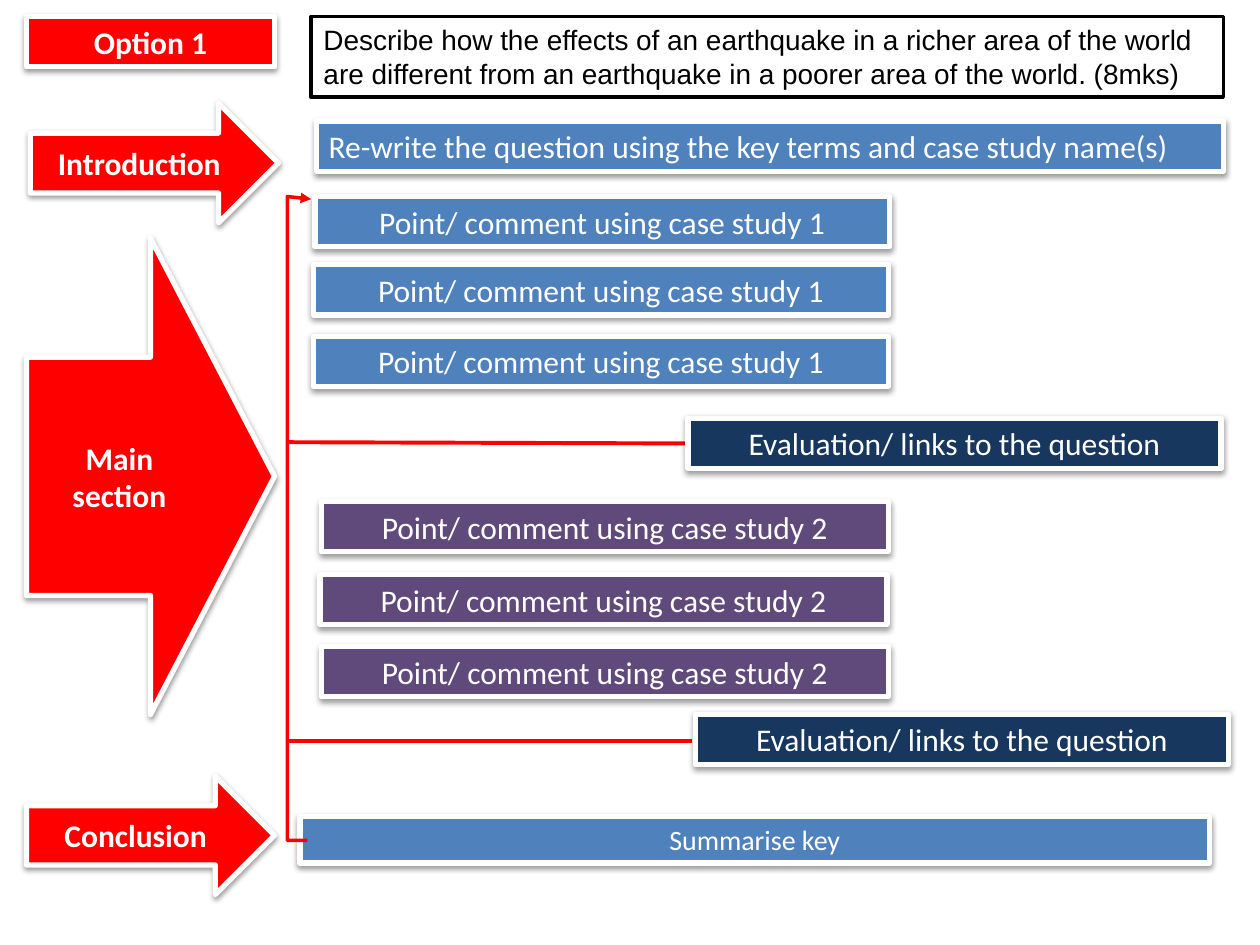
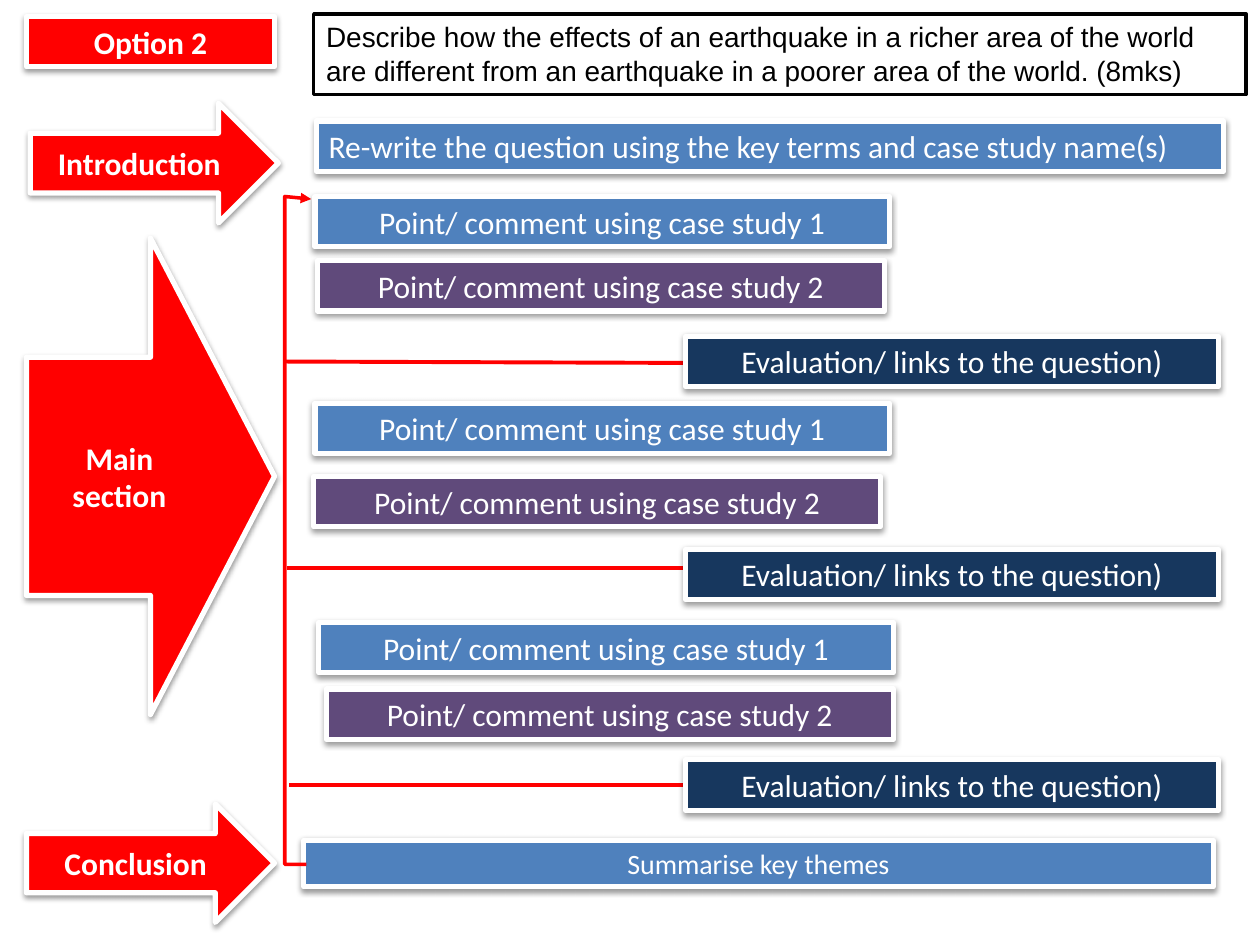
from lxml.etree import SubElement
from pptx import Presentation
from pptx.dml.color import RGBColor
from pptx.enum.shapes import MSO_CONNECTOR, MSO_SHAPE
from pptx.enum.text import MSO_ANCHOR, MSO_AUTO_SIZE, PP_ALIGN
from pptx.oxml.ns import qn
from pptx.util import Pt

RED = RGBColor(0xFF, 0x00, 0x00)
BLUE = RGBColor(0x4F, 0x81, 0xBD)
NAVY = RGBColor(0x17, 0x37, 0x5E)
PURPLE = RGBColor(0x60, 0x4A, 0x7B)
WHITE = RGBColor(0xFF, 0xFF, 0xFF)
BLACK = RGBColor(0x00, 0x00, 0x00)

LABEL = {"name": "Calibri", "size": Pt(18), "bold": False}
HEADING = {**LABEL, "bold": True}
SUMMARY = {**LABEL, "size": Pt(16)}
QUESTION = {"name": "Arial", "size": Pt(16), "bold": False}

QUESTION_TEXT = (
    "Describe how the effects of an earthquake in a richer area of the world are "
    "different from an earthquake in a poorer area of the world. (8mks)"
)
INTRO_TEXT = "Re-write the question using the key terms and case study name(s)"
ROW_H = 28.8
STEPS = {
    "case 1": ("Point/ comment using case study 1", BLUE, 328.3),
    "case 2": ("Point/ comment using case study 2", PURPLE, 324),
    "link": ("Evaluation/ links to the question", NAVY, 304.6),
}

OPTIONS = [
    {
        "title": "Option 1",
        "question": (177.8, 9.4, 521.3, 46.1),
        "conclusion_top": 443.5,
        "summary": ("Summarise key", (171.4, 466.6, 519.8, 26.6)),
        "bracket": (164.2, 112.3, 11.5, 367.9),
        "stems": [(164.2, 252.7, 393.1, 253.4), (164.2, 423.4, 395.3, 423.4)],
        "steps": [
            ("case 1", 0.7, 0), ("case 1", 0, 38.9), ("case 1", 0, 79.9),
            ("link", 213.8, 126.7),
            ("case 2", 4.3, 174.3), ("case 2", 3.6, 216), ("case 2", 4.3, 257.1),
            ("link", 218.1, 295.9),
        ],
        "link_end": "",
    },
    {
        "title": "Option 2",
        "question": (179.3, 7.9, 532.8, 46.1),
        "conclusion_top": 459.4,
        "summary": ("Summarise key themes", (173.5, 480.2, 519.8, 26.6)),
        "bracket": (162.7, 112.3, 12.3, 381.6),
        "stems": [(162.7, 206.6, 391.7, 207.4), (164.2, 324.7, 395.3, 324.7),
                  (164.9, 448.6, 391.7, 448.6)],
        "steps": [
            ("case 1", 0.7, 0), ("case 2", 2.1, 36.7), ("link", 212.4, 79.9),
            ("case 1", 0.7, 118.1), ("case 2", 0, 159.9), ("link", 212.4, 201.6),
            ("case 1", 2.9, 243.4), ("case 2", 7.2, 281.5), ("link", 212.4, 321.9),
        ],
        "link_end": ")",
    },
]


def add_glow(shape):
    """Give a shape the soft shadow straight below it."""
    effects = shape._element.spPr.find(qn("a:effectLst"))
    shadow = SubElement(effects, qn("a:outerShdw"), blurRad="40000", dist="20000",
                        dir="5400000", rotWithShape="0")
    color = SubElement(shadow, qn("a:srgbClr"), val="000000")
    SubElement(color, qn("a:alpha"), val="38000")


def style_box(shape, text, fill, font, align=PP_ALIGN.CENTER, anchor=MSO_ANCHOR.TOP,
              ink=WHITE, edge=WHITE, edge_width=3, glow=True):
    """Colour a shape and write its text at a fixed size."""
    shape.fill.solid()
    shape.fill.fore_color.rgb = fill
    shape.line.color.rgb = edge
    shape.line.width = Pt(edge_width)
    shape.shadow.inherit = False
    if glow:
        add_glow(shape)
    tf = shape.text_frame
    tf.word_wrap = True
    tf.vertical_anchor = anchor
    tf.auto_size = MSO_AUTO_SIZE.NONE
    p = tf.paragraphs[0]
    p.alignment = align
    r = p.add_run()
    r.text = text
    for key, value in font.items():
        setattr(r.font, key, value)
    r.font.color.rgb = ink


def add_box(s, kind, box, text, fill, font, **style):
    """Add a preset shape with text at a box in points."""
    shape = s.shapes.add_shape(kind, *map(Pt, box))
    style_box(shape, text, fill, font, **style)


def add_title(s, box, text):
    """Turn the title placeholder into the red option label."""
    title = s.shapes.title
    title.left, title.top, title.width, title.height = map(Pt, box)
    style_box(title, text, RED, HEADING)


def add_stages(s, box, conclusion_top):
    """Stack the three red stage arrows in a column."""
    left, top, width, _ = box
    for text, dx, y, height in (("Introduction", 2.2, top, 68.4),
                                ("Main section", 0, top + 77.1, 272.2),
                                ("Conclusion", 0, conclusion_top, 67.7)):
        add_box(s, MSO_SHAPE.RIGHT_ARROW, (left + dx, y, width, height), text, RED,
                HEADING, anchor=MSO_ANCHOR.MIDDLE)


def add_bracket(s, box, stems):
    """Draw the red bracket with its arrowhead and the stems to the links."""
    x, y, width, height = box
    points = [(x + width, y + height), (x, y + height), (x, y), (177.8, y + 1.5)]
    start, *rest = [(Pt(px), Pt(py)) for px, py in points]
    builder = s.shapes.build_freeform(*start)
    builder.add_line_segments(rest, close=False)
    bracket = builder.convert_to_shape()
    bracket.fill.background()
    bracket.shadow.inherit = False
    bracket.line.color.rgb = RED
    bracket.line.width = Pt(2)
    SubElement(bracket._element.spPr.find(qn("a:ln")), qn("a:tailEnd"), type="triangle")
    for x1, y1, x2, y2 in stems:
        stem = s.shapes.add_connector(MSO_CONNECTOR.STRAIGHT, *map(Pt, (x2, y2, x1, y1)))
        stem.line.color.rgb = RED
        stem.line.width = Pt(2.25)
        SubElement(stem._element.spPr, qn("a:effectLst"))


def add_steps(s, origin, steps, link_end):
    """Place the points and evaluation links relative to an origin."""
    left, top = origin
    for kind, dx, dy in steps:
        text, fill, width = STEPS[kind]
        if kind == "link":
            text += link_end
        add_box(s, MSO_SHAPE.RECTANGLE, (left + dx, top + dy, width, ROW_H), text, fill,
                LABEL)


def add_option(prs, option):
    """Build one essay plan slide."""
    s = prs.slides.add_slide(prs.slide_layouts[5])
    add_title(s, (15.1, 9.4, 141.8, ROW_H), option["title"])
    add_box(s, MSO_SHAPE.RECTANGLE, option["question"], QUESTION_TEXT, WHITE, QUESTION,
            align=PP_ALIGN.LEFT, ink=BLACK, edge=BLACK, edge_width=2, glow=False)
    add_stages(s, (15.1, 59, 141.8, 452), option["conclusion_top"])
    add_box(s, MSO_SHAPE.RECTANGLE, (180.7, 69.1, 518.4, ROW_H), INTRO_TEXT, BLUE, LABEL,
            align=PP_ALIGN.LEFT)
    text, box = option["summary"]
    add_box(s, MSO_SHAPE.RECTANGLE, box, text, BLUE, SUMMARY)
    add_bracket(s, option["bracket"], option["stems"])
    add_steps(s, (179.3, 112.3), option["steps"], option["link_end"])


def main():
    """Build and save the deck."""
    prs = Presentation()
    prs.slide_width, prs.slide_height = Pt(720), Pt(540)
    for option in OPTIONS:
        add_option(prs, option)
    prs.save("out.pptx")


if __name__ == "__main__":
    main()
